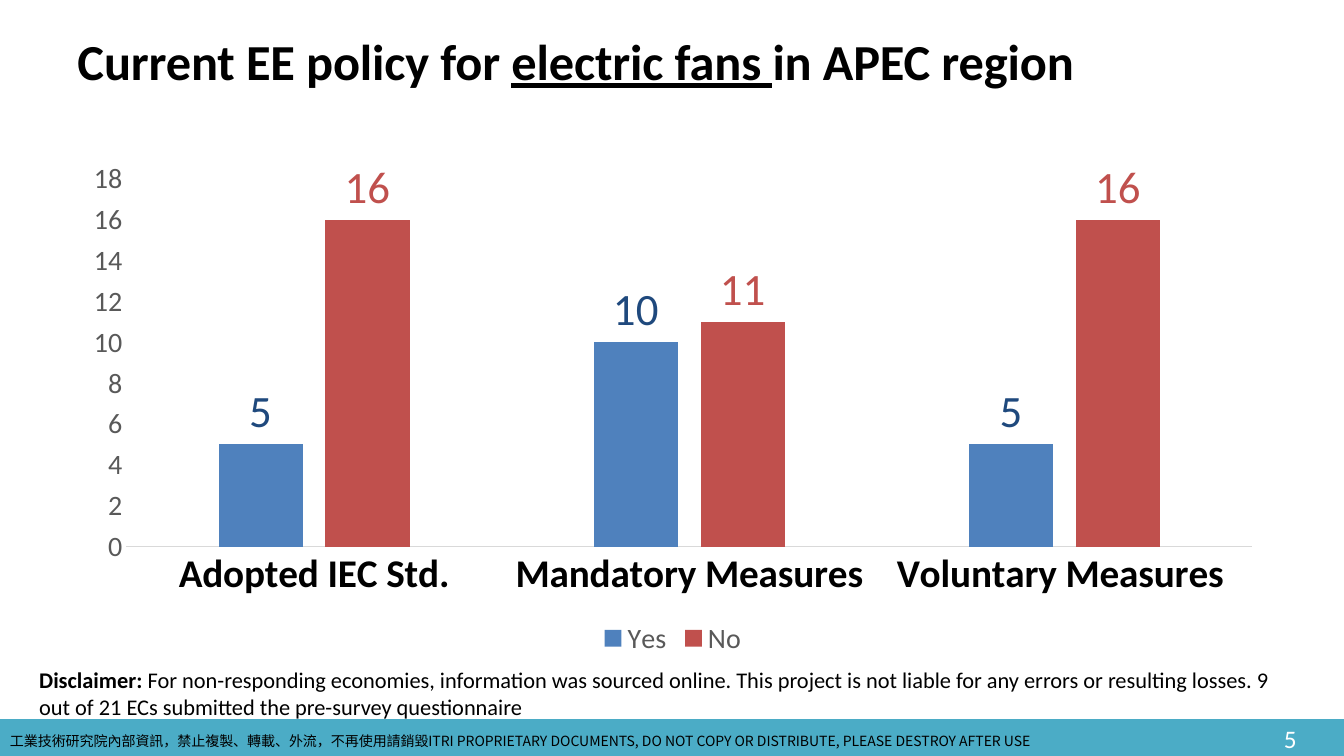
from dataclasses import dataclass

from lxml.etree import SubElement
from pptx import Presentation
from pptx.chart.data import CategoryChartData
from pptx.dml.color import RGBColor
from pptx.enum.chart import XL_CHART_TYPE, XL_LABEL_POSITION, XL_LEGEND_POSITION, XL_TICK_MARK
from pptx.enum.shapes import MSO_SHAPE
from pptx.enum.text import MSO_ANCHOR, PP_ALIGN
from pptx.oxml.ns import qn
from pptx.slide import Slide
from pptx.text.text import Font
from pptx.util import Inches, Pt

COLORS = {
    "teal": "4BACC6", "black": "000000", "white": "FFFFFF", "gray": "595959",
    "rule": "D9D9D9", "blue": "4F81BD", "navy": "1F497D", "red": "C0504D",
}
LATIN, CJK = "Calibri", "Noto Sans CJK SC"
WIDTH, HEIGHT = Inches(13.33), Inches(7.5)


@dataclass(frozen=True)
class Box:
    """Left, top, width and height as percentages of the slide."""
    x: float
    y: float
    w: float
    h: float

    def emu(self) -> tuple[int, int, int, int]:
        return (int(WIDTH * self.x / 100), int(HEIGHT * self.y / 100),
                int(WIDTH * self.w / 100), int(HEIGHT * self.h / 100))


@dataclass(frozen=True)
class Run:
    text: str
    bold: bool = False
    underline: bool = False


@dataclass(frozen=True)
class Label:
    box: Box
    runs: tuple[Run, ...]
    size: float
    color: str = "black"
    font: str = LATIN
    anchor: MSO_ANCHOR = MSO_ANCHOR.TOP
    align: PP_ALIGN = PP_ALIGN.LEFT
    line_spacing: float = 1.0
    tracking: int = 0


@dataclass(frozen=True)
class Answer:
    name: str
    values: tuple[int, ...]
    fill: str
    label_color: str


FOOTER_BAR = Box(0, 95.2, 100, 4.8)
CHART_BOX = Box(5.18, 20, 89.78, 67.47)
CATEGORIES = ("Adopted IEC Std.", "Mandatory Measures", "Voluntary Measures ")
ANSWERS = (
    Answer("Yes", (5, 10, 5), "blue", "navy"),
    Answer("No", (16, 11, 16), "red", "red"),
)
LABELS = (
    Label(Box(0, 96.27, 88.95, 3.6),
          (Run("工業技術研究院內部資訊，禁止複製、轉載、外流，不再使用請銷毀"
               "ITRI PROPRIETARY DOCUMENTS, DO NOT COPY OR DISTRIBUTE, "
               "PLEASE DESTROY AFTER USE"),), 10, font=CJK),
    Label(Box(5.03, 4, 89.78, 8.93),
          (Run("Current EE policy for ", bold=True),
           Run("electric fans ", bold=True, underline=True),
           Run("in APEC region", bold=True)),
          36, anchor=MSO_ANCHOR.MIDDLE, line_spacing=0.9, tracking=-10),
    Label(Box(2.18, 87.47, 95.63, 8.53),
          (Run("Disclaimer: ", bold=True),
           Run("For non-responding economies, information was sourced online. "
               "This project is not liable for any errors or resulting losses. "
               "9 out of 21 ECs submitted the pre-survey questionnaire")), 16),
    Label(Box(74.72, 95.07, 22.5, 5.33), (Run("5"),), 18, color="white",
          anchor=MSO_ANCHOR.MIDDLE, align=PP_ALIGN.RIGHT),
)


def rgb(name: str) -> RGBColor:
    return RGBColor.from_string(COLORS[name])


def set_font(font: Font, size: float, color: str, bold: bool = False, name: str = LATIN) -> None:
    font.name, font.size, font.bold = name, Pt(size), bold
    font.color.rgb = rgb(color)


def add_footer_bar(slide: Slide) -> None:
    sp = slide.shapes.add_shape(MSO_SHAPE.RECTANGLE, *FOOTER_BAR.emu())
    sp.shadow.inherit = False
    sp.fill.solid()
    sp.fill.fore_color.rgb = rgb("teal")
    sp.line.color.rgb = rgb("teal")
    sp.line.width = Pt(1)


def add_label(slide: Slide, label: Label) -> None:
    tf = slide.shapes.add_textbox(*label.box.emu()).text_frame
    tf.word_wrap = True
    tf.vertical_anchor = label.anchor
    p = tf.paragraphs[0]
    p.alignment = label.align
    p.line_spacing = label.line_spacing
    for run in label.runs:
        r = p.add_run()
        r.text = run.text
        set_font(r.font, label.size, label.color, run.bold, label.font)
        r.font.underline = run.underline
        props = r._r.get_or_add_rPr()
        SubElement(props, qn("a:ea")).set("typeface", label.font)
        if label.tracking:
            props.set("spc", str(label.tracking))


def add_policy_chart(slide: Slide) -> None:
    data = CategoryChartData()
    data.categories = CATEGORIES
    for answer in ANSWERS:
        data.add_series(answer.name, answer.values)
    chart = slide.shapes.add_chart(
        XL_CHART_TYPE.COLUMN_CLUSTERED, *CHART_BOX.emu(), data).chart
    chart.has_title = False
    set_font(chart.font, 20, "black")
    chart.has_legend = True
    chart.legend.position = XL_LEGEND_POSITION.BOTTOM
    chart.legend.include_in_layout = False
    set_font(chart.legend.font, 20, "gray")

    for axis in (chart.category_axis, chart.value_axis):
        axis.major_tick_mark = axis.minor_tick_mark = XL_TICK_MARK.NONE
        axis.has_major_gridlines = False
    set_font(chart.category_axis.tick_labels.font, 28, "black", bold=True)
    chart.category_axis.format.line.color.rgb = rgb("rule")
    chart.category_axis.format.line.width = Pt(0.75)
    set_font(chart.value_axis.tick_labels.font, 20, "gray")
    chart.value_axis.format.line.fill.background()
    chart.value_axis.minimum_scale = 0
    chart.value_axis.maximum_scale = 18
    chart.value_axis.major_unit = 2

    plot = chart.plots[0]
    plot.vary_by_categories = False
    plot.gap_width, plot.overlap = 219, -27
    for series, answer in zip(plot.series, ANSWERS):
        series.format.fill.solid()
        series.format.fill.fore_color.rgb = rgb(answer.fill)
        labels = series.data_labels
        labels.show_value = True
        labels.position = XL_LABEL_POSITION.OUTSIDE_END
        set_font(labels.font, 32, answer.label_color)


def main() -> None:
    prs = Presentation()
    prs.slide_width, prs.slide_height = WIDTH, HEIGHT
    slide = prs.slides.add_slide(prs.slide_layouts[6])
    add_footer_bar(slide)
    add_policy_chart(slide)
    for label in LABELS:
        add_label(slide, label)
    prs.save("out.pptx")


if __name__ == "__main__":
    main()
